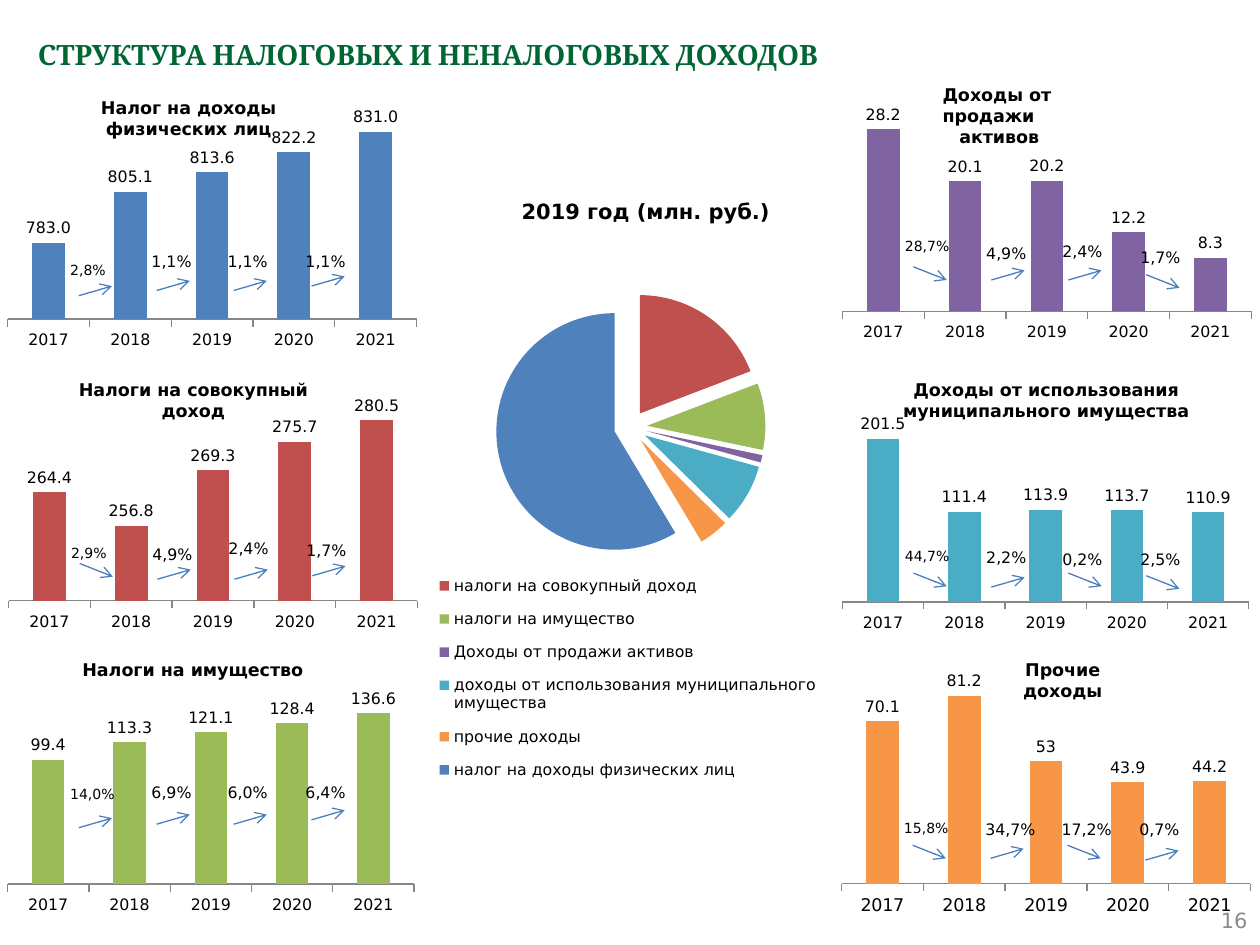
from lxml.etree import SubElement
from pptx import Presentation
from pptx.chart.data import CategoryChartData
from pptx.dml.color import RGBColor
from pptx.enum.chart import XL_CHART_TYPE as Kind, XL_LABEL_POSITION as LabelPos
from pptx.enum.chart import XL_LEGEND_POSITION as LegendPos, XL_TICK_MARK as Tick
from pptx.enum.shapes import MSO_CONNECTOR
from pptx.enum.text import MSO_ANCHOR, MSO_AUTO_SIZE, PP_ALIGN
from pptx.oxml import parse_xml
from pptx.oxml.ns import nsdecls, qn
from pptx.util import Pt

THEME = {
    "sans": "DejaVu Sans", "serif": "Cambria",
    "ink": "000000", "heading": "006633", "number": "8C8C8C",
    "axis": "868686", "arrow": "4B7EBC",
    "blue": "4F81BD", "red": "C0504D", "green": "9BBB59",
    "purple": "8064A2", "teal": "4BACC6", "orange": "F79646",
    "heading_size": 16, "pie_size": 12, "panel_size": 10,
    "body_size": 9, "small_size": 8,
}
L, C, R = PP_ALIGN.LEFT, PP_ALIGN.CENTER, PP_ALIGN.RIGHT
UP, DOWN = -5.5, 7.5  # vertical run of a growth or decline arrow
ARROW_WIDTH = 19
ARROW_LEFTS = (45.5, 90, 134, 178.5)  # from the chart's left edge
CHANGE_LEFTS = (33.5, 80, 123.5, 168)
PLOT = (0.02, 0.02, 0.96, 0.83)
YEARS = ("2017", "2018", "2019", "2020", "2021")

# title: (text, alignment) lines; changes: (label, label top, arrow start, trend)
PANELS = [
    {"title": [("Налоги на имущество", L)], "title_box": (40, 373, 142, 19.5),
     "box": (-0.5, 388, 242, 138), "colour": "green", "range": (0, 160),
     "values": (99.4, 113.3, 121.1, 128.4, 136.6),
     "changes": [("14,0%", 445.5, 473, UP), ("6,9%", 444, 471, UP),
                 ("6,0%", 444, 471, UP), ("6,4%", 443.5, 468.5, UP)]},
    {"title": [("Налоги на совокупный", L), ("доход", C)],
     "title_box": (38, 213, 152.5, 31.5),
     "box": (0, 226, 243.5, 138), "colour": "red", "range": (240, 285),
     "values": (264.4, 256.8, 269.3, 275.7, 280.5),
     "changes": [("2,9%", 307.5, 322, DOWN), ("4,9%", 307.5, 331, UP),
                 ("2,4%", 304.5, 331, UP), ("1,7%", 305.5, 329, UP)]},
    {"title": [("Налог на доходы", C), ("физических лиц", C)],
     "title_box": (49, 52, 117.5, 31.5),
     "box": (-0.5, 60.5, 243.5, 143.5), "colour": "blue", "range": (750, 840),
     "values": (783, 805.1, 813.6, 822.2, 831),
     "changes": [("2,8%", 146, 169, UP), ("1,1%", 140.5, 166, UP),
                 ("1,1%", 140.5, 166, UP), ("1,1%", 140.5, 163.5, UP)]},
    {"title": [("Доходы от продажи", L), ("активов", C)], "wrap": True,
     "title_box": (531.5, 44.5, 79, 46.5), "plot": (0.02, 0.04, 0.96, 0.81),
     "box": (476.5, 60.5, 243.5, 138), "colour": "purple", "range": (0, 30),
     "values": (28.2, 20.1, 20.2, 12.2, 8.3),
     "changes": [("28,7%", 132, 152.5, DOWN), ("4,9%", 135.5, 160, UP),
                 ("2,4%", 134.5, 160, UP), ("1,7%", 138, 157, DOWN)]},
    {"title": [("Доходы от использования", C), ("муниципального имущества", C)],
     "title_box": (507.5, 213, 180.5, 31.5),
     "box": (476.5, 225.5, 242, 139.5), "colour": "teal", "range": (0, 250),
     "values": (201.5, 111.4, 113.9, 113.7, 110.9),
     "changes": [("44,7%", 309.5, 327.5, DOWN), ("2,2%", 309.5, 335.5, UP),
                 ("0,2%", 310.5, 327.5, DOWN), ("2,5%", 310.5, 329, DOWN)]},
    {"title": [("Прочие доходы", C)], "wrap": True,
     "title_box": (572, 373, 70.5, 31.5), "format": "General", "year_size": 10,
     "box": (476, 383, 243.5, 143.5), "colour": "orange", "range": (0, 90),
     "values": (70.1, 81.2, 53, 43.9, 44.2),
     "changes": [("15,8%", 465, 483, DOWN), ("34,7%", 465, 490.5, UP),
                 ("17,2%", 465, 483, DOWN), ("0,7%", 465, 491.5, UP)]},
]
SHARES = [
    ("налоги на совокупный доход", 19, "red"),
    ("налоги на имущество", 9, "green"),
    ("Доходы от продажи активов", 1, "purple"),
    ("доходы от использования муниципального имущества", 8, "teal"),
    ("прочие доходы", 4, "orange"),
    ("налог на доходы физических лиц", 58, "blue"),
]


def apply(target, **values):
    for attribute, value in values.items():
        setattr(target, attribute, value)


def style_font(font, size, colour="ink", face="sans", bold=False):
    apply(font, name=THEME[face], size=Pt(size), bold=bold)
    font.color.rgb = RGBColor.from_string(THEME[colour])


def fill(part, colour):
    part.format.fill.solid()
    part.format.fill.fore_color.rgb = RGBColor.from_string(THEME[colour])


def add_text(slide, box, lines, size, wrap=False, spacing=None,
             anchor=MSO_ANCHOR.TOP, **font):
    frame = slide.shapes.add_textbox(*map(Pt, box)).text_frame
    apply(frame, word_wrap=wrap, vertical_anchor=anchor,
          auto_size=MSO_AUTO_SIZE.NONE if wrap else MSO_AUTO_SIZE.SHAPE_TO_FIT_TEXT)
    for index, (text, alignment) in enumerate(lines):
        paragraph = frame.add_paragraph() if index else frame.paragraphs[0]
        apply(paragraph, alignment=alignment, line_spacing=spacing)
        run = paragraph.add_run()
        run.text = text
        style_font(run.font, size, **font)


def manual_layout(bounds, inner=False):
    layout = parse_xml(f"<c:layout {nsdecls('c')}/>")
    manual = SubElement(layout, qn("c:manualLayout"))
    settings = [("layoutTarget", "inner")] if inner else []
    settings += [("xMode", "edge"), ("yMode", "edge"), *zip("xywh", bounds)]
    for tag, value in settings:
        SubElement(manual, qn(f"c:{tag}")).set("val", str(value))
    return layout


def add_chart(slide, kind, box, categories, values, plot):
    """Add a one-series chart with a clear background and a fixed plot area."""
    data = CategoryChartData()
    data.categories = categories
    data.add_series("Series 1", values)
    chart = slide.shapes.add_chart(kind, *map(Pt, box), data).chart
    apply(chart, has_title=False, has_legend=False)
    style_font(chart.font, THEME["body_size"])
    space = chart.element
    space.find(qn("c:chart")).addnext(parse_xml(
        f"<c:spPr {nsdecls('c', 'a')}><a:noFill/><a:ln><a:noFill/></a:ln></c:spPr>"))
    area = space.find(".//" + qn("c:plotArea"))
    for old in area.findall(qn("c:layout")):
        area.remove(old)
    area.insert(0, manual_layout(plot, inner=True))
    return chart


def add_columns(slide, panel):
    chart = add_chart(slide, Kind.COLUMN_CLUSTERED, panel["box"], YEARS,
                      panel["values"], panel.get("plot", PLOT))
    low, high = panel["range"]
    apply(chart.value_axis, minimum_scale=low, maximum_scale=high,
          has_major_gridlines=False, visible=False)
    years = chart.category_axis
    apply(years, major_tick_mark=Tick.OUTSIDE, has_major_gridlines=False)
    years.format.line.color.rgb = RGBColor.from_string(THEME["axis"])
    style_font(years.tick_labels.font, panel.get("year_size", THEME["body_size"]))
    columns = chart.plots[0]
    apply(columns, gap_width=150, vary_by_categories=False, has_data_labels=True)
    apply(columns.data_labels, show_value=True, position=LabelPos.OUTSIDE_END,
          number_format=panel.get("format", "0.0"), number_format_is_linked=False)
    style_font(columns.data_labels.font, THEME["body_size"])
    fill(columns.series[0], panel["colour"])


def add_arrow(slide, left, top, run):
    arrow = slide.shapes.add_connector(
        MSO_CONNECTOR.STRAIGHT, Pt(left), Pt(top), Pt(left + ARROW_WIDTH), Pt(top + run))
    arrow.line.width = Pt(0.75)
    arrow.line.color.rgb = RGBColor.from_string(THEME["arrow"])
    SubElement(arrow.line._get_or_add_ln(), qn("a:tailEnd")).set("type", "arrow")
    SubElement(arrow._element.spPr, qn("a:effectLst"))


def add_changes(slide, panel):
    origin = panel["box"][0]
    steps = zip(panel["changes"], CHANGE_LEFTS, ARROW_LEFTS)
    for index, ((label, top, start, trend), label_left, arrow_left) in enumerate(steps):
        size = THEME["body_size" if index else "small_size"]
        width = 14.4 + size * (0.64 * len(label) + 0.18)
        add_arrow(slide, origin + arrow_left, start, trend)
        add_text(slide, (origin + label_left, top, width, size * 2), [(label, L)], size)


def add_pie(slide):
    names, values, colours = zip(*SHARES)
    chart = add_chart(slide, Kind.PIE, (175, 124, 356.5, 358.5), names, values,
                      (0.2, 0.12, 0.64, 0.43))
    pie = chart.plots[0]
    pie.vary_by_categories = True
    shares = pie.series[0]
    explosion = parse_xml(f'<c:explosion {nsdecls("c")} val="14"/>')
    chart.element.find(".//" + qn("c:ser")).find(qn("c:tx")).addnext(explosion)
    for index, colour in enumerate(colours):
        fill(shares.points[index], colour)
    chart.has_legend = True
    apply(chart.legend, position=LegendPos.BOTTOM, include_in_layout=False)
    style_font(chart.legend.font, THEME["body_size"])
    legend = chart.element.find(".//" + qn("c:legend"))
    for old in legend.findall(qn("c:layout")):
        legend.remove(old)
    legend.find(qn("c:legendPos")).addnext(manual_layout((0.2, 0.55, 0.63, 0.37)))


def main():
    deck = Presentation()
    apply(deck, slide_width=Pt(720), slide_height=Pt(540))
    slide = deck.slides.add_slide(deck.slide_layouts[6])
    add_text(slide, (14.5, 14, 692, 57),
             [("СТРУКТУРА НАЛОГОВЫХ И НЕНАЛОГОВЫХ ДОХОДОВ", L)], THEME["heading_size"],
             wrap=True, spacing=1.2, colour="heading", face="serif", bold=True)
    add_text(slide, (552, 511, 168, 29), [("16", R)], THEME["pie_size"],
             wrap=True, anchor=MSO_ANCHOR.MIDDLE, colour="number")
    add_pie(slide)
    add_text(slide, (291, 110, 158.5, 21.5), [("2019 год (млн. руб.)", L)],
             THEME["pie_size"], bold=True)
    for panel in PANELS:
        add_text(slide, panel["title_box"], panel["title"], THEME["panel_size"],
                 wrap=panel.get("wrap", False), bold=True)
        add_columns(slide, panel)
    for panel in PANELS:
        add_changes(slide, panel)
    deck.save("out.pptx")


if __name__ == "__main__":
    main()
